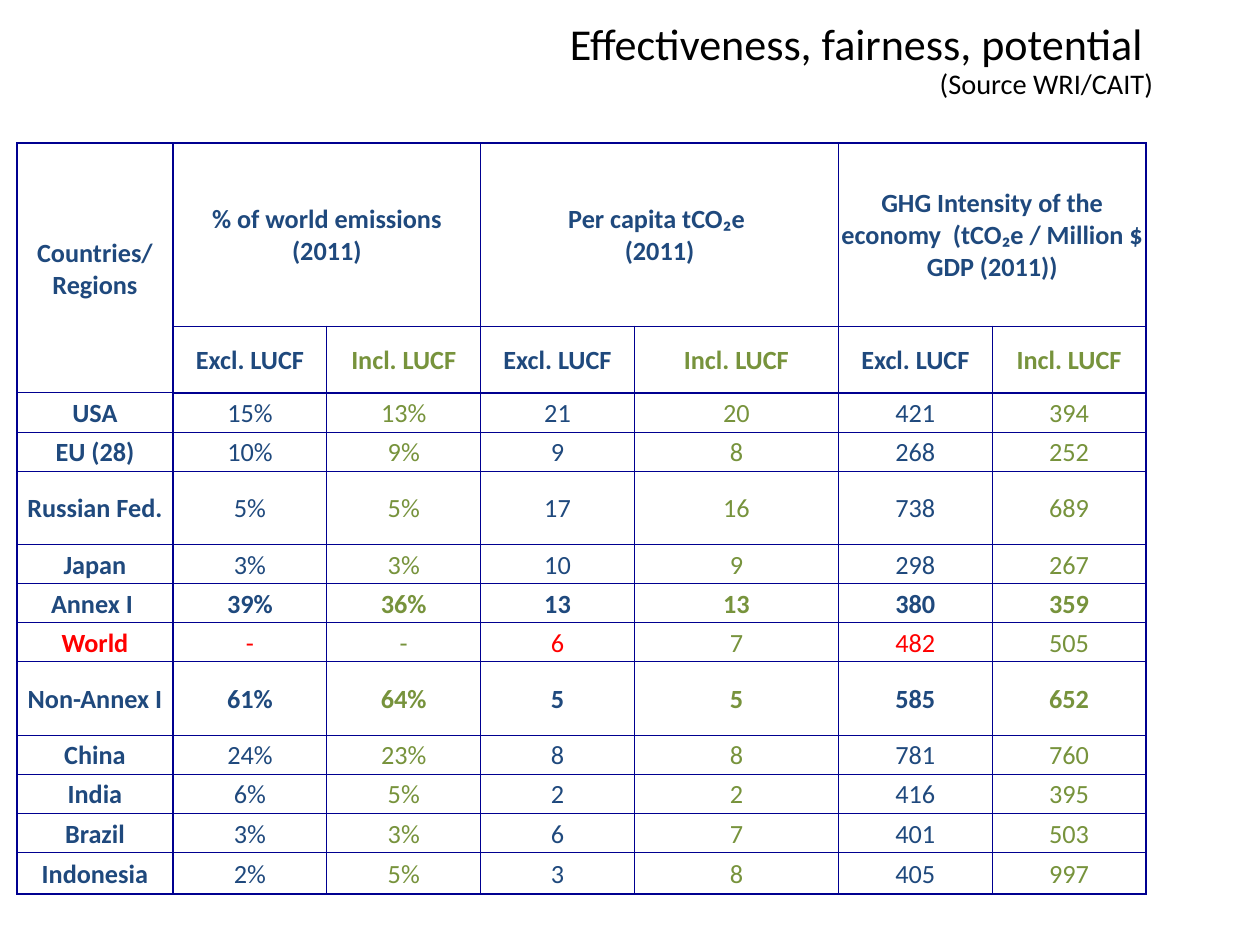
"""Build a slide comparing greenhouse gas emissions across countries and regions."""
from dataclasses import dataclass

from lxml.etree import SubElement
from pptx import Presentation
from pptx.dml.color import RGBColor
from pptx.enum.text import MSO_ANCHOR, PP_ALIGN
from pptx.oxml.ns import qn
from pptx.util import Pt


@dataclass(frozen=True)
class Theme:
    font: str = "Calibri"
    title_size: float = 25.2
    source_size: float = 16.2
    table_size: float = 15
    title: str = "000000"
    excluding: str = "1F497D"
    including: str = "77933C"
    world: str = "FF0000"
    border: str = "000090"
    thin: float = 0.5
    thick: float = 1


@dataclass(frozen=True)
class Region:
    name: str
    values: tuple[str, ...]
    height: float = 22.4
    bold: bool = False
    world: bool = False


THEME = Theme()
HEADER_HEIGHTS = (104.5, 38)
COLUMN_WIDTHS = (89.3, 87.9, 87.9, 87.9, 116.6, 87.9, 87.9)
GROUPS = (
    "% of world emissions (2011)",
    "Per capita tCO₂e \n(2011)",
    "GHG Intensity of the economy  (tCO₂e / Million $ GDP (2011))",
)
REGIONS = (
    Region("USA", ("15%", "13%", "21", "20", "421", "394")),
    Region("EU (28)", ("10%", "9%", "9", "8", "268", "252")),
    Region("Russian Fed.", ("5%", "5%", "17", "16", "738", "689"), height=41.8),
    Region("Japan", ("3%", "3%", "10", "9", "298", "267")),
    Region("Annex I ", ("39%", "36%", "13", "13", "380", "359"), bold=True),
    Region("World", ("-", "-", "6", "7", "482", "505"), world=True),
    Region("Non-Annex I", ("61%", "64%", "5", "5", "585", "652"), height=41.8, bold=True),
    Region("China", ("24%", "23%", "8", "8", "781", "760")),
    Region("India", ("6%", "5%", "2", "2", "416", "395")),
    Region("Brazil", ("3%", "3%", "6", "7", "401", "503")),
    Region("Indonesia", ("2%", "5%", "3", "8", "405", "997"), height=23.6),
)
LAST_ROW = len(HEADER_HEIGHTS) + len(REGIONS) - 1


def format_paragraph(para, size: float, color: str, align, bold: bool = False) -> None:
    """Align a paragraph and style its runs."""
    para.alignment = align
    for span in para.runs:
        span.font.name = THEME.font
        span.font.size = Pt(size)
        span.font.bold = bold
        span.font.color.rgb = RGBColor.from_string(color)


def add_title(page) -> None:
    """Fill the title placeholder with the heading and its source."""
    box = page.shapes.title
    box.left, box.top, box.width, box.height = Pt(54), Pt(12), Pt(612), Pt(90)
    frame = box.text_frame
    frame.text = "Effectiveness, fairness, potential \n (Source WRI/CAIT)"
    frame.word_wrap = True
    frame.vertical_anchor = MSO_ANCHOR.TOP
    frame.margin_top = Pt(1)
    for para, size in zip(frame.paragraphs, (THEME.title_size, THEME.source_size)):
        para.line_spacing = 0.9
        format_paragraph(para, size, THEME.title, PP_ALIGN.RIGHT)


def set_borders(cell, row: int, column: int) -> None:
    """Draw thick lines around column groups and table blocks, thin ones inside."""
    thick_sides = {
        "lnL": column == 0 or column % 2 == 1,
        "lnR": column % 2 == 0 or row == 0,
        "lnT": row == 0 or (row == 2 and column > 0),
        "lnB": row == LAST_ROW or (row == 1 and column > 0),
    }
    properties = cell._tc.get_or_add_tcPr()
    for side, is_thick in thick_sides.items():
        width = Pt(THEME.thick if is_thick else THEME.thin)
        line = SubElement(properties, qn(f"a:{side}"), w=str(width))
        fill = SubElement(line, qn("a:solidFill"))
        SubElement(fill, qn("a:srgbClr"), val=THEME.border)


def fill_cell(cell, text: str, color: str, bold: bool) -> None:
    """Write centred text into a table cell."""
    cell.text = text
    for para in cell.text_frame.paragraphs:
        format_paragraph(para, THEME.table_size, color, PP_ALIGN.CENTER, bold)


def fill_headers(table) -> None:
    """Merge and fill the two header rows."""
    table.cell(0, 0).merge(table.cell(1, 0))
    fill_cell(table.cell(0, 0), "Countries/Regions", THEME.excluding, True)
    for column, group in zip(range(1, 7, 2), GROUPS):
        table.cell(0, column).merge(table.cell(0, column + 1))
        fill_cell(table.cell(0, column), group, THEME.excluding, True)
        fill_cell(table.cell(1, column), "Excl. LUCF", THEME.excluding, True)
        fill_cell(table.cell(1, column + 1), "Incl. LUCF", THEME.including, True)


def fill_region(table, row: int, region: Region) -> None:
    """Fill one region's row, alternating the two accounting colours."""
    main_color = THEME.world if region.world else THEME.excluding
    fill_cell(table.cell(row, 0), region.name, main_color, True)
    for column, value in enumerate(region.values, start=1):
        color = main_color if column % 2 else THEME.including
        fill_cell(table.cell(row, column), value, color, region.bold)


def add_emissions_table(page) -> None:
    """Add the emissions table with its sizes, borders and contents."""
    heights = HEADER_HEIGHTS + tuple(region.height for region in REGIONS)
    table = page.shapes.add_table(
        len(heights), len(COLUMN_WIDTHS), Pt(9.6), Pt(81.8),
        Pt(sum(COLUMN_WIDTHS)), Pt(sum(heights)),
    ).table
    table.first_row = False
    table.horz_banding = False
    for column, width in zip(table.columns, COLUMN_WIDTHS):
        column.width = Pt(width)
    for row, height in enumerate(heights):
        table.rows[row].height = Pt(height)
        for column, cell in enumerate(table.rows[row].cells):
            cell.margin_left = cell.margin_right = cell.margin_top = Pt(1.4)
            cell.margin_bottom = Pt(0)
            cell.vertical_anchor = MSO_ANCHOR.MIDDLE
            set_borders(cell, row, column)
            cell.fill.background()
    fill_headers(table)
    for row, region in enumerate(REGIONS, start=len(HEADER_HEIGHTS)):
        fill_region(table, row, region)


def main() -> None:
    """Create and save the deck."""
    deck = Presentation()
    deck.slide_width, deck.slide_height = Pt(720), Pt(540)
    page = deck.slides.add_slide(deck.slide_layouts.get_by_name("Title Only"))
    add_title(page)
    add_emissions_table(page)
    deck.save("out.pptx")


if __name__ == "__main__":
    main()
